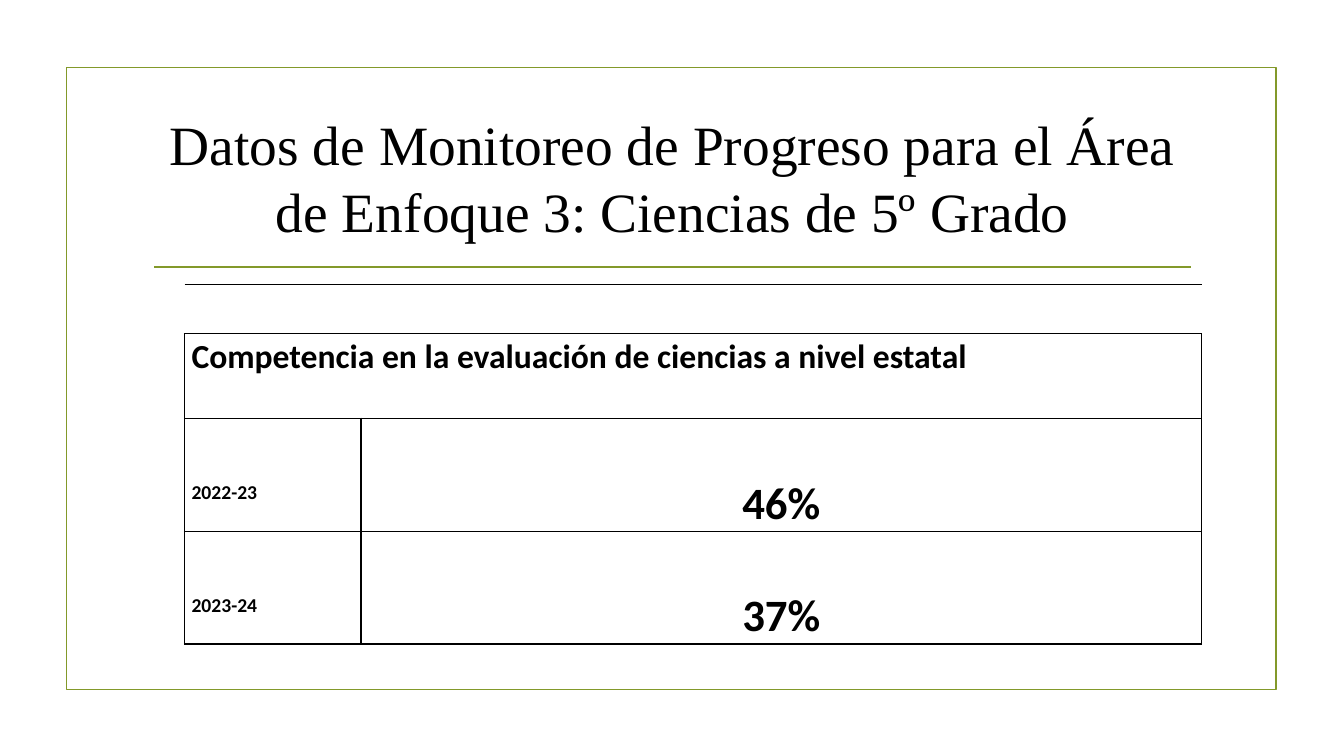
from lxml import etree
from pptx import Presentation
from pptx.dml.color import RGBColor
from pptx.enum.shapes import MSO_CONNECTOR, MSO_SHAPE
from pptx.enum.text import MSO_ANCHOR, PP_ALIGN
from pptx.oxml.ns import qn
from pptx.util import Inches, Pt

RECTANGLE = MSO_SHAPE.RECTANGLE
STRAIGHT = MSO_CONNECTOR.STRAIGHT
TOP, MIDDLE, BOTTOM = MSO_ANCHOR.TOP, MSO_ANCHOR.MIDDLE, MSO_ANCHOR.BOTTOM
LEFT, CENTER = PP_ALIGN.LEFT, PP_ALIGN.CENTER

OLIVE = RGBColor(0x83, 0x99, 0x2A)
BLACK = RGBColor(0, 0, 0)

TITLE = "Datos de Monitoreo de Progreso para el Área de Enfoque 3: Ciencias de 5º Grado"
HEADING = "Competencia en la evaluación de ciencias a nivel estatal"
RESULTS = [("2022-23", "46%"), ("2023-24", "37%")]
COLUMN_WIDTHS = [1.75] + [1.35] * 3 + [1.43] * 3
ROW_HEIGHTS = [0.49, 0.84] + [1.12] * len(RESULTS)


def add_text(frame, text, size, font_name, align, bold=False):
    paragraph = frame.paragraphs[0]
    paragraph.alignment = align
    run = paragraph.add_run()
    run.text = text
    run.font.size = Pt(size)
    run.font.name = font_name
    run.font.bold = bold
    run.font.color.rgb = BLACK
    return paragraph


def add_frame(slide, left, top, width, height):
    """Olive border with the rule below the title."""
    border = slide.shapes.add_shape(
        RECTANGLE, Inches(left), Inches(top), Inches(width), Inches(height))
    border.shadow.inherit = False
    border.fill.background()

    rule_y = Inches(top + 1.98)
    rule = slide.shapes.add_connector(
        STRAIGHT, Inches(left + 0.87), rule_y, Inches(left + width - 0.85), rule_y)
    etree.SubElement(rule._element.spPr, qn("a:effectLst"))

    for outline in (border.line, rule.line):
        outline.color.rgb = OLIVE
        outline.width = Pt(1.25)
    # The frame sits behind the title
    tree = slide.shapes._spTree
    tree.insert(2, border._element)
    tree.insert(3, rule._element)


def add_title(slide, left, top, width, height):
    title = slide.shapes.title
    title.left, title.top = Inches(left), Inches(top)
    title.width, title.height = Inches(width), Inches(height)
    title.text_frame.word_wrap = True
    title.text_frame.vertical_anchor = MIDDLE
    add_text(title.text_frame, TITLE, 39.6, "Times New Roman", CENTER)


def style_cell(cell, sides):
    """Black 1 pt borders on the given sides, no line elsewhere, no fill."""
    properties = cell._tc.get_or_add_tcPr()
    for side in "LRTB":
        border = etree.SubElement(properties, qn(f"a:ln{side}"), w=str(Pt(1)))
        if side in sides:
            fill = etree.SubElement(border, qn("a:solidFill"))
            etree.SubElement(fill, qn("a:srgbClr"), val=str(BLACK))
        else:
            etree.SubElement(border, qn("a:noFill"))
    cell.fill.background()


def write_cell(cell, text, size, align, anchor, bottom=0):
    cell.margin_left = cell.margin_right = Inches(0.07)
    cell.margin_top, cell.margin_bottom = 0, Inches(bottom)
    cell.vertical_anchor = anchor
    paragraph = add_text(cell.text_frame, text, size, "Calibri", align, bold=True)
    paragraph.line_spacing = 1.07


def add_results_table(slide, left, top):
    table = slide.shapes.add_table(
        len(ROW_HEIGHTS), len(COLUMN_WIDTHS), Inches(left), Inches(top),
        Inches(sum(COLUMN_WIDTHS)), Inches(sum(ROW_HEIGHTS))).table
    table.first_row = table.horz_banding = False
    for column, width in zip(table.columns, COLUMN_WIDTHS):
        column.width = Inches(width)
    for row, height in zip(table.rows, ROW_HEIGHTS):
        row.height = Inches(height)

    # Borders: the empty first row has only horizontal lines
    for index, row in enumerate(table.rows):
        for cell in row.cells:
            style_cell(cell, "TB" if index == 0 else "LRTB")

    # Heading across the full width
    last = len(COLUMN_WIDTHS) - 1
    table.cell(1, 0).merge(table.cell(1, last))
    write_cell(table.cell(1, 0), HEADING, 24, LEFT, TOP)

    # One row per school year
    for index, (year, share) in enumerate(RESULTS, start=2):
        table.cell(index, 1).merge(table.cell(index, last))
        write_cell(table.cell(index, 0), year, 14, LEFT, BOTTOM, bottom=0.26)
        write_cell(table.cell(index, 1), share, 32, CENTER, BOTTOM)


def main():
    presentation = Presentation()
    presentation.slide_width = Inches(13.33)
    presentation.slide_height = Inches(7.5)
    slide = presentation.slides.add_slide(presentation.slide_layouts[5])
    add_frame(slide, 0.66, 0.67, 12, 6.17)
    add_title(slide, 1.42, 1.07, 10.5, 1.37)
    add_results_table(slide, 1.83, 2.82)
    presentation.save("out.pptx")


if __name__ == "__main__":
    main()
